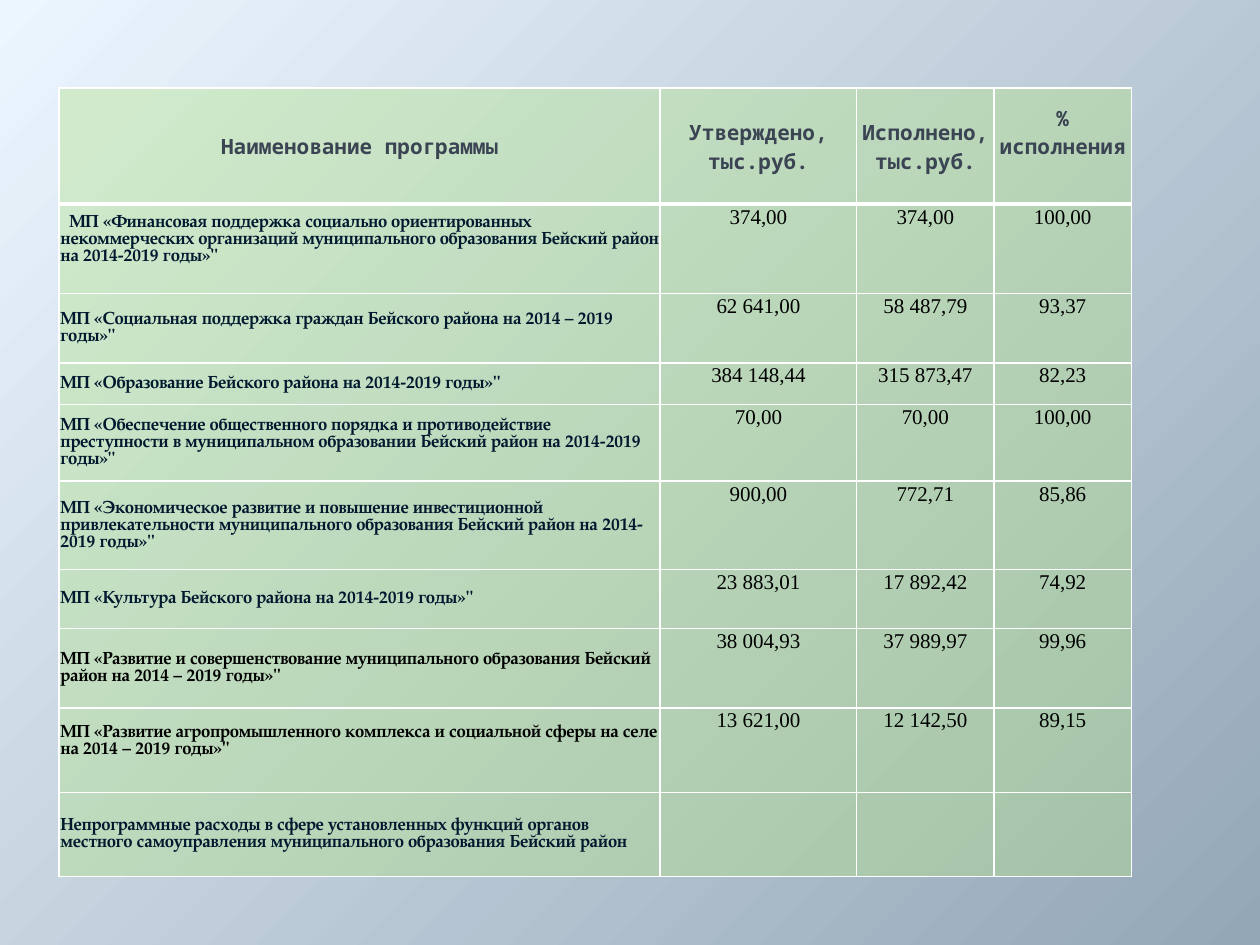
from pptx import Presentation
from pptx.dml.color import RGBColor
from pptx.enum.text import MSO_ANCHOR, PP_ALIGN
from pptx.oxml import parse_xml
from pptx.oxml.ns import nsdecls, qn
from pptx.util import Inches, Pt

CENTER, LEFT = PP_ALIGN.CENTER, PP_ALIGN.LEFT
TOP, MIDDLE = MSO_ANCHOR.TOP, MSO_ANCHOR.MIDDLE

THEME = {
    "background": ("ECF6FF", "94A7B7"),
    "fill": "B2E389",
    "fill_alpha": 40000,
    "border": "FFFFFF",
    "thin": 1,
    "thick": 3,
    "header": {"font": "Noto Sans Mono", "size": 12, "bold": True, "color": "3B4453"},
    "program": {"font": "TeX Gyre Pagella", "size": 10, "bold": True, "color": "00192F"},
    "dark_program": {"font": "TeX Gyre Pagella", "size": 10, "bold": True, "color": "000000"},
    "value": {"font": "Times New Roman", "size": 12, "bold": False, "color": "000000"},
}
PROGRAM_LINE_SPACING = 9.7

HEADERS = ["Наименование программы", "Утверждено, тыс.руб.", "Исполнено, тыс.руб.", "% исполнения"]
PROGRAMS = [
    ("МП «Финансовая поддержка социально ориентированных некоммерческих организаций "
     "муниципального образования Бейский район на 2014-2019 годы»\"", "374,00", "374,00", "100,00"),
    ("МП «Социальная поддержка граждан Бейского района на 2014 – 2019 годы»\"",
     "62 641,00", "58 487,79", "93,37"),
    ("МП «Образование Бейского района на 2014-2019 годы»\"", "384 148,44", "315 873,47", "82,23"),
    ("МП «Обеспечение общественного порядка и противодействие преступности в муниципальном "
     "образовании Бейский район на 2014-2019 годы»\"", "70,00", "70,00", "100,00"),
    ("МП «Экономическое развитие и повышение инвестиционной привлекательности муниципального "
     "образования Бейский район на 2014-2019 годы»\"", "900,00", "772,71", "85,86"),
    ("МП «Культура Бейского района на 2014-2019 годы»\"", "23 883,01", "17 892,42", "74,92"),
    ("МП «Развитие и совершенствование муниципального образования Бейский район "
     "на 2014 – 2019 годы»\"", "38 004,93", "37 989,97", "99,96"),
    ("МП «Развитие агропромышленного комплекса и социальной сферы на селе "
     "на 2014 – 2019 годы»\"", "13 621,00", "12 142,50", "89,15"),
    ("Непрограммные расходы в сфере установленных функций органов местного самоуправления "
     "муниципального образования Бейский район", "", "", ""),
]
DARK_ROWS = (7, 8)
BOTTOM_INSETS = {(0, 3): 0.23, (1, 0): 0.14, (8, 0): 0.14}
FIRST_LINE_INDENTS = {(1, 0): 0.07}

TABLE_LEFT, TABLE_TOP = 0.47, 0.7
COLUMN_WIDTHS = [4.77, 1.56, 1.09, 1.09]
ROW_HEIGHTS = [0.92, 0.71, 0.55, 0.33, 0.61, 0.7, 0.47, 0.63, 0.67, 0.67]


def paint_background(slide):
    """Give the slide a gradient that spreads from its top left corner."""
    start, end = THEME["background"]
    slide.element.cSld.insert(0, parse_xml(
        f'<p:bg {nsdecls("p", "a")}><p:bgPr><a:gradFill rotWithShape="1"><a:gsLst>'
        f'<a:gs pos="0"><a:srgbClr val="{start}"/></a:gs>'
        f'<a:gs pos="100000"><a:srgbClr val="{end}"/></a:gs></a:gsLst>'
        '<a:path path="circle"><a:fillToRect r="100000" b="100000"/></a:path>'
        '</a:gradFill><a:effectLst/></p:bgPr></p:bg>'))


def paint_cell(cell, row):
    """Set the translucent fill and the white borders of a cell."""
    cell.fill.solid()
    cell.fill.fore_color.rgb = RGBColor.from_string(THEME["fill"])
    properties = cell._tc.get_or_add_tcPr()
    color = properties.find(f'{qn("a:solidFill")}/{qn("a:srgbClr")}')
    color.append(parse_xml(f'<a:alpha {nsdecls("a")} val="{THEME["fill_alpha"]}"/>'))
    thick_side = {0: "lnB", 1: "lnT"}.get(row)
    for position, side in enumerate(("lnL", "lnR", "lnT", "lnB")):
        width = Pt(THEME["thick" if side == thick_side else "thin"])
        properties.insert(position, parse_xml(
            f'<a:{side} {nsdecls("a")} w="{width}"><a:solidFill>'
            f'<a:srgbClr val="{THEME["border"]}"/></a:solidFill></a:{side}>'))


def write_cell(cell, row, column, text):
    """Place and style the text of a cell according to its row and column."""
    is_program = row > 0 and column == 0
    if row == 0:
        style = THEME["header"]
    elif is_program:
        style = THEME["dark_program" if row in DARK_ROWS else "program"]
    else:
        style = THEME["value"]
    cell.margin_left = cell.margin_right = cell.margin_top = Inches(0.01)
    cell.margin_bottom = Inches(BOTTOM_INSETS.get((row, column), 0))
    cell.vertical_anchor = MIDDLE if row == 0 or is_program else TOP
    cell.text = text
    paragraph = cell.text_frame.paragraphs[0]
    paragraph.alignment = LEFT if is_program else CENTER
    if is_program:
        paragraph.line_spacing = Pt(PROGRAM_LINE_SPACING)
    if (row, column) in FIRST_LINE_INDENTS:
        indent = Inches(FIRST_LINE_INDENTS[row, column])
        paragraph._p.get_or_add_pPr().set("indent", str(indent))
    paragraph.font.name = style["font"]
    paragraph.font.size = Pt(style["size"])
    paragraph.font.bold = style["bold"]
    paragraph.font.color.rgb = RGBColor.from_string(style["color"])


def add_program_table(slide):
    """Add the table of municipal programmes."""
    rows = [HEADERS, *PROGRAMS]
    table = slide.shapes.add_table(
        len(rows), len(HEADERS), Inches(TABLE_LEFT), Inches(TABLE_TOP),
        Inches(sum(COLUMN_WIDTHS)), Inches(sum(ROW_HEIGHTS))).table
    table.horz_banding = False
    for column, width in zip(table.columns, COLUMN_WIDTHS):
        column.width = Inches(width)
    for row, (height, texts) in enumerate(zip(ROW_HEIGHTS, rows)):
        table.rows[row].height = Inches(height)
        for column, text in enumerate(texts):
            cell = table.cell(row, column)
            paint_cell(cell, row)
            write_cell(cell, row, column, text)


def main():
    """Build and save the slide."""
    presentation = Presentation()
    presentation.slide_width, presentation.slide_height = Inches(10), Inches(7.5)
    slide = presentation.slides.add_slide(presentation.slide_layouts[6])
    paint_background(slide)
    add_program_table(slide)
    presentation.save("out.pptx")


if __name__ == "__main__":
    main()
